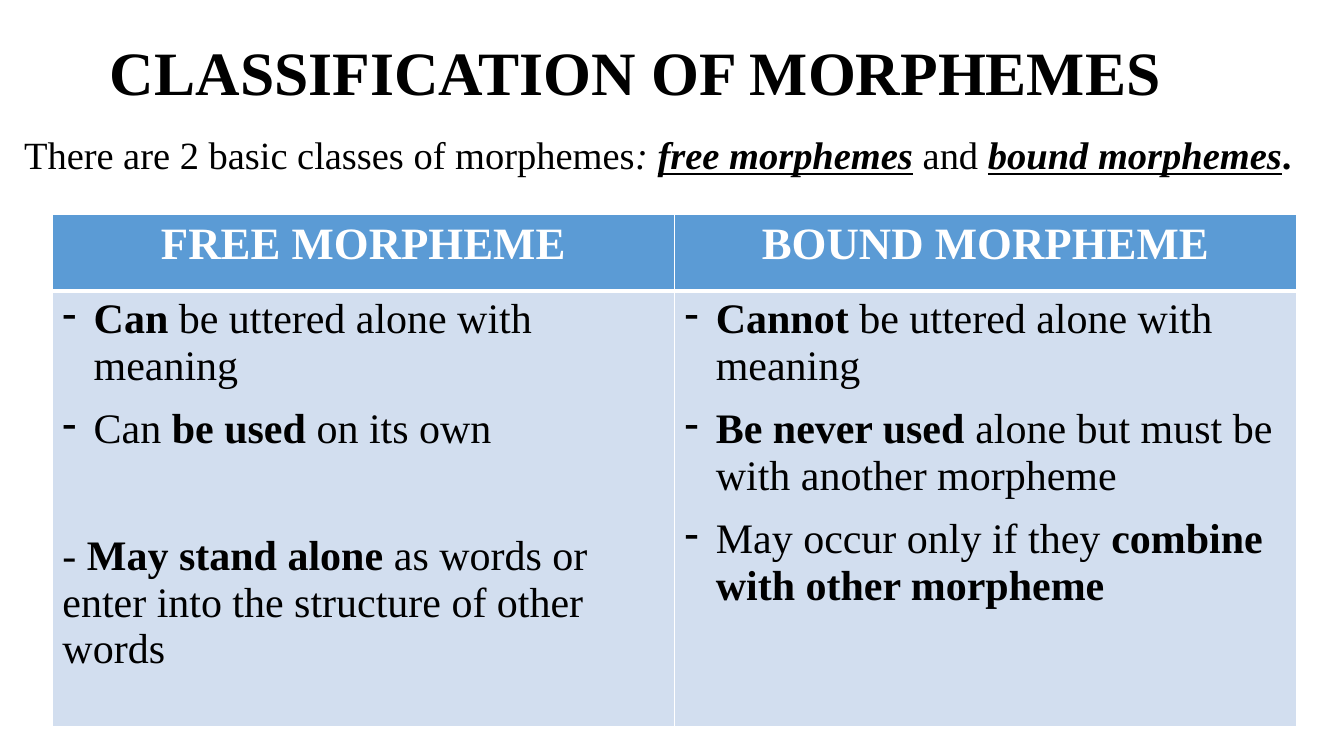
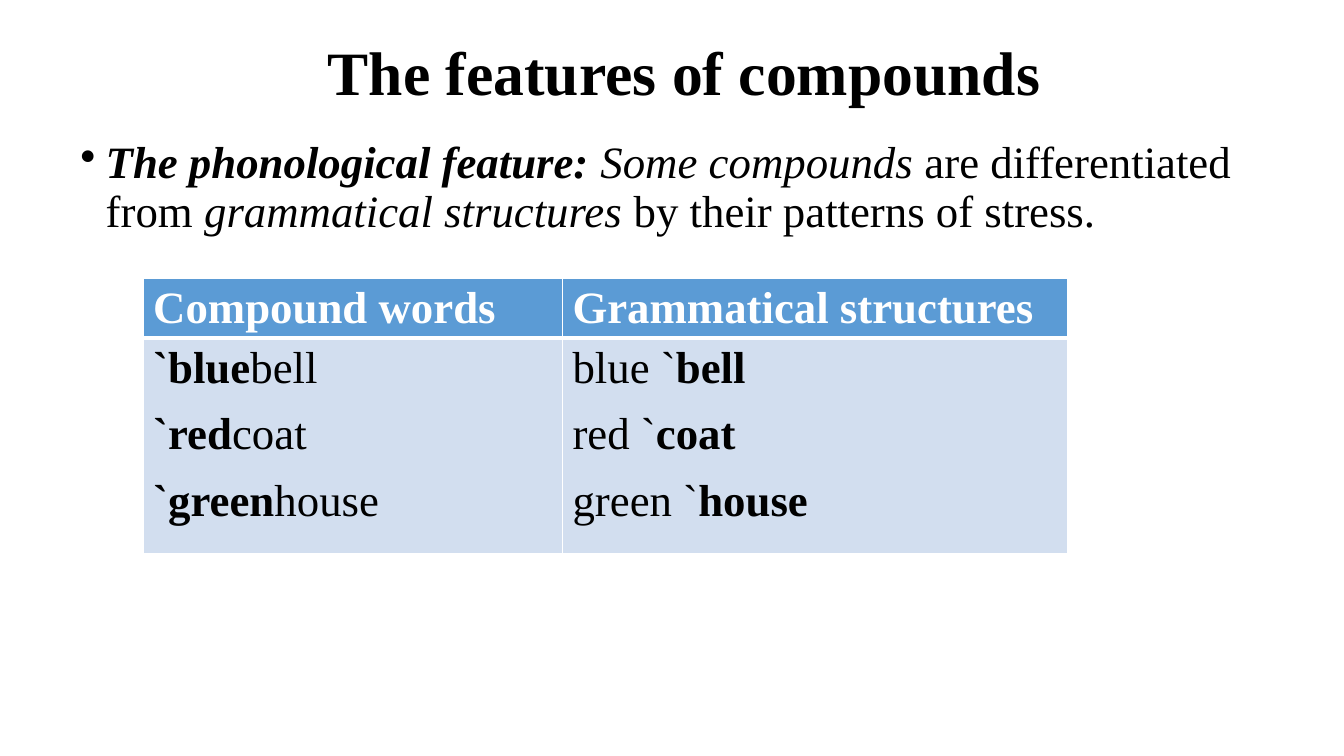
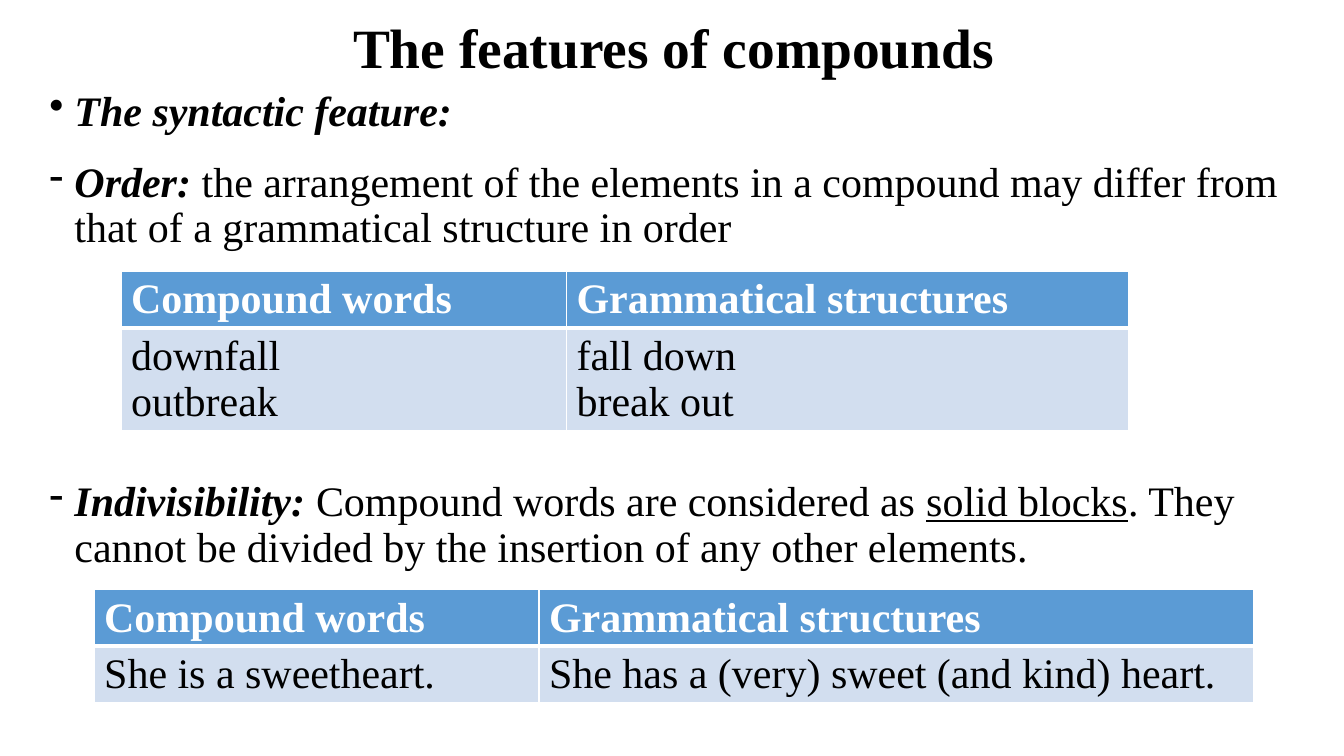
from lxml.etree import SubElement
from pptx import Presentation
from pptx.dml.color import RGBColor
from pptx.enum.text import MSO_ANCHOR, MSO_AUTO_SIZE, PP_ALIGN
from pptx.oxml.ns import qn
from pptx.util import Inches, Pt

FONT = "Times New Roman"
BLACK = RGBColor(0x00, 0x00, 0x00)
WHITE = RGBColor(0xFF, 0xFF, 0xFF)
HEADER_BLUE = RGBColor(0x5B, 0x9B, 0xD5)
PALE_BLUE = RGBColor(0xD2, 0xDE, 0xEF)
TITLE_ONLY = 5
HEADINGS = ["Compound words", "Grammatical structures"]


def write(paragraph, content, size=30, color=BLACK, bold=False, align=None,
          before=0, after=0, line=None, bullet=None, indent=0.25):
    """Fill a paragraph with a string or with (text, "b/i/u" flags) runs."""
    paragraph.alignment = align
    paragraph.space_before, paragraph.space_after = Pt(before), Pt(after)
    paragraph.line_spacing = line
    if bullet:
        properties = paragraph._p.get_or_add_pPr()
        properties.set("marL", str(Inches(indent)))
        properties.set("indent", str(-Inches(indent)))
        SubElement(properties, qn("a:buChar")).set("char", bullet)
    for text, flags in [(content, "")] if isinstance(content, str) else content:
        run = paragraph.add_run()
        run.text = text
        font = run.font
        font.name, font.size, font.color.rgb = FONT, Pt(size), color
        font.bold = bold or "b" in flags
        font.italic, font.underline = "i" in flags, "u" in flags


class Deck:
    """Hold the shared style and the current slide; lengths are percent of the slide."""

    def __init__(self):
        self.presentation = Presentation()
        self.presentation.slide_width = Inches(13.33)
        self.presentation.slide_height = Inches(7.5)

    def across(self, share):
        return round(self.presentation.slide_width * share / 100)

    def down(self, share):
        return round(self.presentation.slide_height * share / 100)

    def box(self, left, top, width, height):
        return self.across(left), self.down(top), self.across(width), self.down(height)

    def fill_frame(self, frame, paragraphs, anchor, **style):
        frame.word_wrap = True
        frame.auto_size = MSO_AUTO_SIZE.NONE
        frame.vertical_anchor = anchor
        self.fill_paragraphs(frame, paragraphs, **style)

    def fill_paragraphs(self, frame, paragraphs, **style):
        for index, (content, extra) in enumerate(paragraphs):
            paragraph = frame.add_paragraph() if index else frame.paragraphs[0]
            write(paragraph, content, **{**style, **extra})

    def slide(self, title, left, top, height, size=44, align=PP_ALIGN.CENTER):
        layout = self.presentation.slide_layouts[TITLE_ONLY]
        self.current = self.presentation.slides.add_slide(layout)
        heading = self.current.shapes.title
        heading.left, heading.top, heading.width, heading.height = self.box(
            left, top, 86.25, height)
        self.fill_frame(heading.text_frame, [(title, {})], MSO_ANCHOR.MIDDLE,
                        size=size, bold=True, align=align, line=0.9)

    def text(self, place, paragraphs, anchor=MSO_ANCHOR.TOP, **style):
        frame = self.current.shapes.add_textbox(*self.box(*place)).text_frame
        self.fill_frame(frame, paragraphs, anchor, **style)

    def paint(self, cell, fill, bottom):
        properties = cell._tc.get_or_add_tcPr()
        for side, width in (("L", 1), ("R", 1), ("T", 1), ("B", bottom)):
            border = SubElement(properties, qn(f"a:ln{side}"), w=str(Pt(width)))
            color = SubElement(SubElement(border, qn("a:solidFill")), qn("a:srgbClr"))
            color.set("val", str(WHITE))
        cell.fill.solid()
        cell.fill.fore_color.rgb = fill

    def table(self, left, top, columns, rows, headings, bodies, header=None, **style):
        place = self.box(left, top, sum(columns), sum(rows))
        table = self.current.shapes.add_table(2, len(columns), *place).table
        for column, share in zip(table.columns, columns):
            column.width = self.across(share)
        for row, share in zip(table.rows, rows):
            row.height = self.down(share)
        head_style = {**style, "color": WHITE, "bold": True, **(header or {})}
        for index, (heading, body) in enumerate(zip(headings, bodies)):
            head, content = table.cell(0, index), table.cell(1, index)
            self.paint(head, HEADER_BLUE, 3)
            self.paint(content, PALE_BLUE, 1)
            self.fill_paragraphs(head.text_frame, [(heading, {})], **head_style)
            self.fill_paragraphs(content.text_frame, body, **style)


def morpheme_classes(deck):
    deck.slide("CLASSIFICATION OF MORPHEMES", 7.43, 4.53, 10.8, align=PP_ALIGN.LEFT)
    dash = {"bullet": "-", "indent": 0.31}
    free = [
        ([("Can", "b"), (" be uttered alone with meaning", "")], dash),
        ([("Can ", ""), ("be used ", "b"), ("on its own", "")], dash),
        ([("- ", ""), ("May stand alone ", "b"),
          ("as words or enter into the structure of other words", "")], {"before": 51.5}),
    ]
    bound = [
        ([("Cannot", "b"), (" be uttered alone with meaning", "")], dash),
        ([("Be never used ", "b"), ("alone but must be with another morpheme", "")], dash),
        ([("May occur only if they ", ""), ("combine with other morpheme", "b")], dash),
    ]
    deck.table(3.9, 28.4, [46.29, 46.29], [10.13, 57.6],
               ["FREE MORPHEME", "BOUND MORPHEME"], [free, bound],
               header={"size": 32, "align": PP_ALIGN.CENTER}, before=6, after=6)
    intro = [("There are 2 basic classes of morphemes", ""), (": ", "i"),
             ("free morphemes", "biu"), (" ", "b"), ("and ", ""),
             ("bound morphemes", "biu"), (".", "b")]
    deck.text((1.05, 15.73, 98.95, 10.8), [(intro, {})], MSO_ANCHOR.MIDDLE,
              size=27.5, line=0.7, after=12)


def phonological_feature(deck):
    deck.slide("The features of compounds", 7.8, 4, 11.87)
    feature = [("The phonological feature: ", "bi"), ("Some compounds", "i"),
               (" are differentiated from ", ""), ("grammatical structures", "i"),
               (" by their patterns of stress.", "")]
    deck.text((5.25, 17.87, 87.6, 16), [(feature, {"bullet": "•"})],
              size=32, line=0.9, before=10, after=12)
    pairs = [("blue", "bell"), ("red", "coat"), ("green", "house")]
    compounds = [([(f"`{first}", "b"), (second, "")], {}) for first, second in pairs]
    structures = [([(f"{first} `", ""), (second, "b")], {}) for first, second in pairs]
    deck.table(10.65, 36.8, [31.2, 37.6], [7.8, 28.53], HEADINGS,
               [compounds, structures], header={"before": 0, "after": 0},
               size=32, before=6, after=6)


def syntactic_feature(deck):
    deck.slide("The features of compounds", 7, 2.13, 9.2, size=39.6)
    order = [("Order: ", "bi"),
             ("the arrangement of the elements in a compound may differ from "
              "that of a grammatical structure in order", "")]
    indivisibility = [("Indivisibility: ", "bi"),
                      ("Compound words are considered as ", ""), ("solid blocks", "u"),
                      (". They cannot be divided by the insertion of any other elements.", "")]
    spacing = {"line": 0.9, "before": 6, "after": 12}
    deck.text((2.93, 11.33, 94.2, 22.67),
              [([("The syntactic feature:", "bi")], {"bullet": "•"}),
               (order, {"bullet": "-"})], **spacing)
    deck.text((2.93, 62.9, 94.2, 14.67), [(indivisibility, {"bullet": "-"})], **spacing)
    deck.table(9, 35.87, [33.15, 41.8], [7.35, 13.6], HEADINGS,
               [[("downfall", {}), ("outbreak", {})],
                [("fall down", {}), ("break out", {})]])
    deck.table(7, 78, [33.1, 53.2], [7.4, 7.4], HEADINGS,
               [[("She is a sweetheart.", {})],
                [("She has a (very) sweet (and kind) heart.", {})]])


def main():
    deck = Deck()
    morpheme_classes(deck)
    phonological_feature(deck)
    syntactic_feature(deck)
    deck.presentation.save("out.pptx")


if __name__ == "__main__":
    main()
